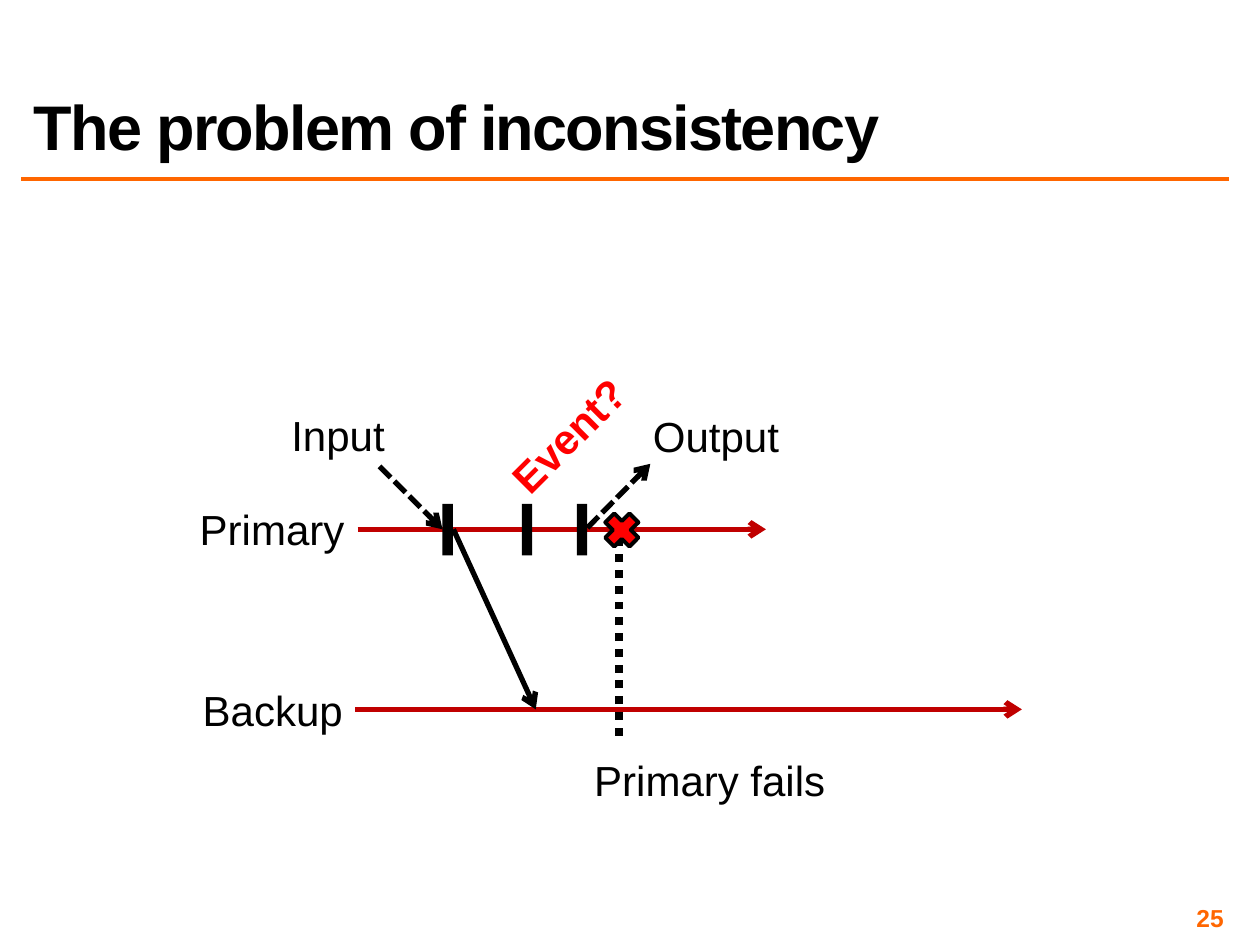
"""Build the slide on inconsistency between a primary and its backup."""
import pptx
import pptx.dml.color
import pptx.enum.dml
import pptx.enum.shapes
import pptx.enum.text
import pptx.oxml.ns
import pptx.util
from lxml import etree

Cm, Pt = pptx.util.Cm, pptx.util.Pt
RGB = pptx.dml.color.RGBColor
SHAPE = pptx.enum.shapes.MSO_SHAPE
ALIGN = pptx.enum.text.PP_ALIGN
ANCHOR = pptx.enum.text.MSO_ANCHOR
AUTO = pptx.enum.text.MSO_AUTO_SIZE
DASH = pptx.enum.dml.MSO_LINE.SQUARE_DOT
DOT = pptx.enum.dml.MSO_LINE.ROUND_DOT
qn = pptx.oxml.ns.qn

COLORS = {"ink": "000000", "accent": "FF6600", "axis": "C00000", "alert": "FF0000"}
PRIMARY_Y, BACKUP_Y = 10.67, 14.3


def write(sp, text, size, color, bold, align, **frame):
    tf = sp.text_frame
    for name, value in frame.items():
        setattr(tf, name, value)
    p = tf.paragraphs[0]
    p.alignment = align
    r = p.add_run()
    r.text = text
    for name, value in {"name": "Arial", "size": Pt(size), "bold": bold}.items():
        setattr(r.font, name, value)
    r.font.color.rgb = RGB.from_string(COLORS[color])
    return p, r


prs = pptx.Presentation()
prs.slide_width, prs.slide_height = Cm(25.4), Cm(19.05)
s = prs.slides.add_slide(prs.slide_layouts[5])

title = s.shapes.title
title.left, title.top, title.width, title.height = Cm(0.43), Cm(0.43), Cm(24.33), Cm(2.97)
p, r = write(title, "The problem of inconsistency", 36, "ink", True, ALIGN.LEFT,
             vertical_anchor=ANCHOR.BOTTOM, auto_size=AUTO.NONE, word_wrap=True)
p.line_spacing = 0.8
r.font._element.set("spc", "-100")

number = s.shapes.add_textbox(Cm(18.85), Cm(18.21), Cm(5.92), Cm(0.58))
write(number, "25", 14, "accent", True, ALIGN.RIGHT, word_wrap=True,
      vertical_anchor=ANCHOR.MIDDLE, margin_left=Cm(0.1), margin_right=Cm(0.1),
      margin_top=Cm(0.1), margin_bottom=Cm(0.1))

lines = [
    (0.43, 3.61, 24.77, 3.61, "accent", 2, None, False),
    (7.21, PRIMARY_Y, 15.44, PRIMARY_Y, "axis", 3, None, True),
    (7.16, BACKUP_Y, 20.6, BACKUP_Y, "axis", 3, None, True),
    (7.65, 9.4, 8.92, PRIMARY_Y, "ink", 3, DASH, True),
    (11.84, 10.64, 13.11, 9.35, "ink", 3, DASH, True),
    (12.47, 14.83, 12.47, PRIMARY_Y, "ink", 4.5, DOT, False),
    (9.14, PRIMARY_Y, 10.8, BACKUP_Y, "ink", 3, None, True),
]
for x1, y1, x2, y2, color, weight, dash, arrow in lines:
    line = s.shapes.add_connector(pptx.enum.shapes.MSO_CONNECTOR.STRAIGHT,
                                  Cm(x1), Cm(y1), Cm(x2), Cm(y2))
    line.line.color.rgb = RGB.from_string(COLORS[color])
    line.line.width = Pt(weight)
    if dash:
        line.line.dash_style = dash
    if arrow:
        etree.SubElement(line.line._get_or_add_ln(), qn("a:tailEnd"), type="arrow")
    etree.SubElement(line._element.spPr, qn("a:effectLst"))

for x in (8.92, 10.52, 11.63):
    tick = s.shapes.add_shape(SHAPE.RECTANGLE, Cm(x), Cm(10.16), Cm(0.21), Cm(1.04))
    tick.shadow.inherit = False
    tick.fill.solid()
    tick.fill.fore_color.rgb = RGB.from_string(COLORS["ink"])
    tick.line.fill.background()

labels = [
    ("Primary", 3.76, 10.03, 3.45, "ink", False, ALIGN.CENTER, 0),
    ("Backup", 3.81, 13.67, 3.38, "ink", False, ALIGN.CENTER, 0),
    ("Input", 5.61, 8.13, 2.41, "ink", False, ALIGN.CENTER, 0),
    ("Output", 12.9, 8.15, 3.07, "ink", False, ALIGN.CENTER, 0),
    ("Primary fails", 11.73, 15.09, 5.21, "ink", False, ALIGN.LEFT, 0),
    ("Event?", 9.78, 8.13, 3.35, "alert", True, ALIGN.CENTER, 315),
]
for text, x, y, w, color, bold, align, rotation in labels:
    sp = s.shapes.add_textbox(Cm(x), Cm(y), Cm(w), Cm(1.27))
    sp.rotation = rotation
    write(sp, text, 24, color, bold, align, word_wrap=False,
          auto_size=AUTO.SHAPE_TO_FIT_TEXT)

cross = s.shapes.add_shape(SHAPE.CROSS, Cm(12.19), Cm(10.34), Cm(0.69), Cm(0.69))
cross.adjustments[0] = 0.315
cross.rotation = 45
cross.shadow.inherit = False
cross.fill.solid()
cross.fill.fore_color.rgb = RGB.from_string(COLORS["alert"])
cross.line.color.rgb = RGB.from_string(COLORS["ink"])
cross.line.width = Pt(2.25)

prs.save("out.pptx")
